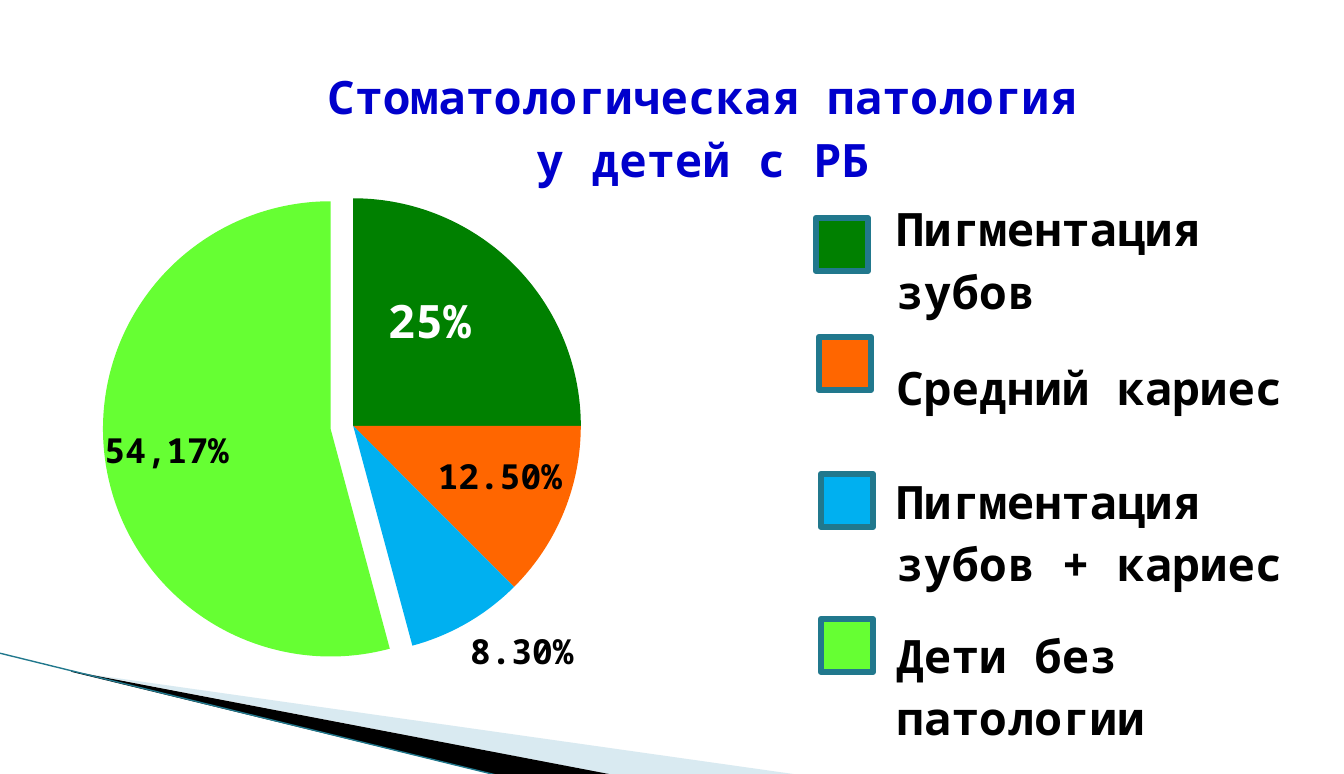
from lxml.etree import SubElement
from pptx import Presentation
from pptx.chart.data import CategoryChartData
from pptx.dml.color import RGBColor
from pptx.enum.chart import XL_CHART_TYPE as ChartType, XL_LABEL_POSITION as LabelPosition
from pptx.enum.shapes import MSO_CONNECTOR as Connector, MSO_SHAPE as Shape
from pptx.enum.text import MSO_ANCHOR as Anchor
from pptx.oxml import parse_xml
from pptx.oxml.ns import nsdecls, qn
from pptx.util import Emu, Pt

FONT = "Noto Sans Mono"
COLORS = {
    "title": "0000CC", "text": "000000", "light": "FFFFFF", "edge": "21788D",
    "mist": "A0CBDC", "black": "000000",
    "green": "008000", "orange": "FF6600", "blue": "00B0F0", "lime": "66FF33",
}
CHART_WIDTH, CHART_HEIGHT = 1343, 762


def px(value):
    return Emu(round(value * 914400 / 103.5))


def style(font, size, color):
    font.name = FONT
    font.size = Pt(size)
    font.bold = True
    font.color.rgb = RGBColor.from_string(COLORS[color])


deck = Presentation()
deck.slide_width, deck.slide_height = px(1344), px(774)
page = deck.slides.add_slide(deck.slide_layouts[6])

wedges = [
    ("mist", 40, [(73, 672), (800, 775), (613, 775), (73, 671)]),
    ("black", 100, [(71, 671), (614, 775), (500, 776), (72, 672)]),
]
for color, opacity, points in wedges:
    corners = [(px(x), px(y)) for x, y in points]
    builder = page.shapes.build_freeform(*corners[0])
    builder.add_line_segments(corners[1:])
    wedge = builder.convert_to_shape()
    wedge.shadow.inherit = False
    wedge.line.fill.background()
    wedge.fill.solid()
    wedge.fill.fore_color.rgb = RGBColor.from_string(COLORS[color])
    if opacity < 100:
        tint = wedge.fill._xPr.find(".//" + qn("a:srgbClr"))
        SubElement(tint, qn("a:alpha"), val=str(opacity * 1000))

stripe = page.shapes.add_connector(Connector.STRAIGHT, px(-1), px(653), px(500), px(776))
stripe.line.width = Pt(0.95)
stripe.line.color.rgb = RGBColor.from_string(COLORS["edge"])
SubElement(stripe._element.spPr, qn("a:effectLst"))

data = CategoryChartData(number_format="0.00%")
data.categories = ["1", "2", "3", "4"]
data.add_series("Стоматологическая патология у детей с РБ", [0.25, 0.125, 0.083, 0.5417])
chart = page.shapes.add_chart(
    ChartType.PIE, px(2), px(29), px(CHART_WIDTH), px(CHART_HEIGHT), data).chart
chart.has_legend = False
style(chart.font, 18, "text")
chart.has_title = True
heading = chart.chart_title.text_frame
for index, line in enumerate(["Стоматологическая патология", "у детей с РБ"]):
    para = heading.paragraphs[0] if index == 0 else heading.add_paragraph()
    span = para.add_run()
    span.text = line
    style(span.font, 32, "title")

LAYOUT = "<c:layout %s><c:manualLayout>%s</c:manualLayout></c:layout>"
title_layout = parse_xml(LAYOUT % (nsdecls("c"), (
    '<c:xMode val="edge"/><c:yMode val="edge"/><c:x val="0.24"/><c:y val="0.04"/>')))
title_element = chart.chart_title._element
for old in title_element.findall(qn("c:layout")):
    title_element.remove(old)
title_element.find(qn("c:tx")).addnext(title_layout)

plot_area = chart._chartSpace.chart.plotArea
for old in plot_area.findall(qn("c:layout")):
    plot_area.remove(old)
plot_area.insert(0, parse_xml(LAYOUT % (nsdecls("c"), (
    '<c:layoutTarget val="inner"/><c:xMode val="edge"/><c:yMode val="edge"/>'
    '<c:x val="0.092"/><c:y val="0.222"/><c:w val="0.339"/><c:h val="0.598"/>'))))

plot = chart.plots[0]
plot.vary_by_categories = True
plot.has_data_labels = True
plot.data_labels.show_value = True
plot.data_labels.number_format = "0.00%"
plot.data_labels.number_format_is_linked = False
style(plot.data_labels.font, 24, "text")

center, outside = LabelPosition.CENTER, LabelPosition.OUTSIDE_END
slices = [
    ("green", "25%", 32, "light", center, -4, -25),
    ("orange", None, 24, "text", center, 42, 6),
    ("blue", None, 24, "text", outside, 0, 0),
    ("lime", "54,17%", 24, "text", center, -51, 6),
]
series = plot.series[0]
for index, (color, wording, size, ink, place, shift_x, shift_y) in enumerate(slices):
    point = series.points[index]
    point.format.fill.solid()
    point.format.fill.fore_color.rgb = RGBColor.from_string(COLORS[color])
    point.format.line.fill.background()
    label = point.data_label
    if wording:
        span = label.text_frame.paragraphs[0].add_run()
        span.text = wording
        style(span.font, size, ink)
    else:
        style(label.font, size, ink)
    label.position = place
    if shift_x or shift_y:
        offset = '<c:x val="%.3f"/><c:y val="%.3f"/>' % (
            shift_x / CHART_WIDTH, shift_y / CHART_HEIGHT)
        label._dLbl.find(qn("c:idx")).addnext(parse_xml(LAYOUT % (nsdecls("c"), offset)))

lime_point = series._element.findall(qn("c:dPt"))[3]
lime_point.find(qn("c:spPr")).addprevious(parse_xml('<c:explosion %s val="10"/>' % nsdecls("c")))

legend = [
    ("green", "Пигментация зубов", 119, 816, 218),
    ("orange", "Средний кариес", 119, 819, 337),
    ("blue", "Пигментация зубов + кариес", 172, 821, 474),
    ("lime", "Дети без патологии", 119, 821, 619),
]
table = page.shapes.add_table(4, 2, px(765), px(192), px(545), px(529)).table
table.first_row = False
table.horz_banding = False
table.columns[0].width, table.columns[1].width = px(121), px(424)
for row, (color, wording, height, left, top) in enumerate(legend):
    table.rows[row].height = px(height)
    for cell in table.rows[row].cells:
        cell.fill.background()
        cell.vertical_anchor = Anchor.MIDDLE
    span = table.cell(row, 1).text_frame.paragraphs[0].add_run()
    span.text = wording
    style(span.font, 32, "text")

    swatch = page.shapes.add_shape(Shape.RECTANGLE, px(left), px(top), px(52), px(53))
    swatch.shadow.inherit = False
    swatch.fill.solid()
    swatch.fill.fore_color.rgb = RGBColor.from_string(COLORS[color])
    swatch.line.color.rgb = RGBColor.from_string(COLORS["edge"])
    swatch.line.width = Pt(4.33)

deck.save("out.pptx")
